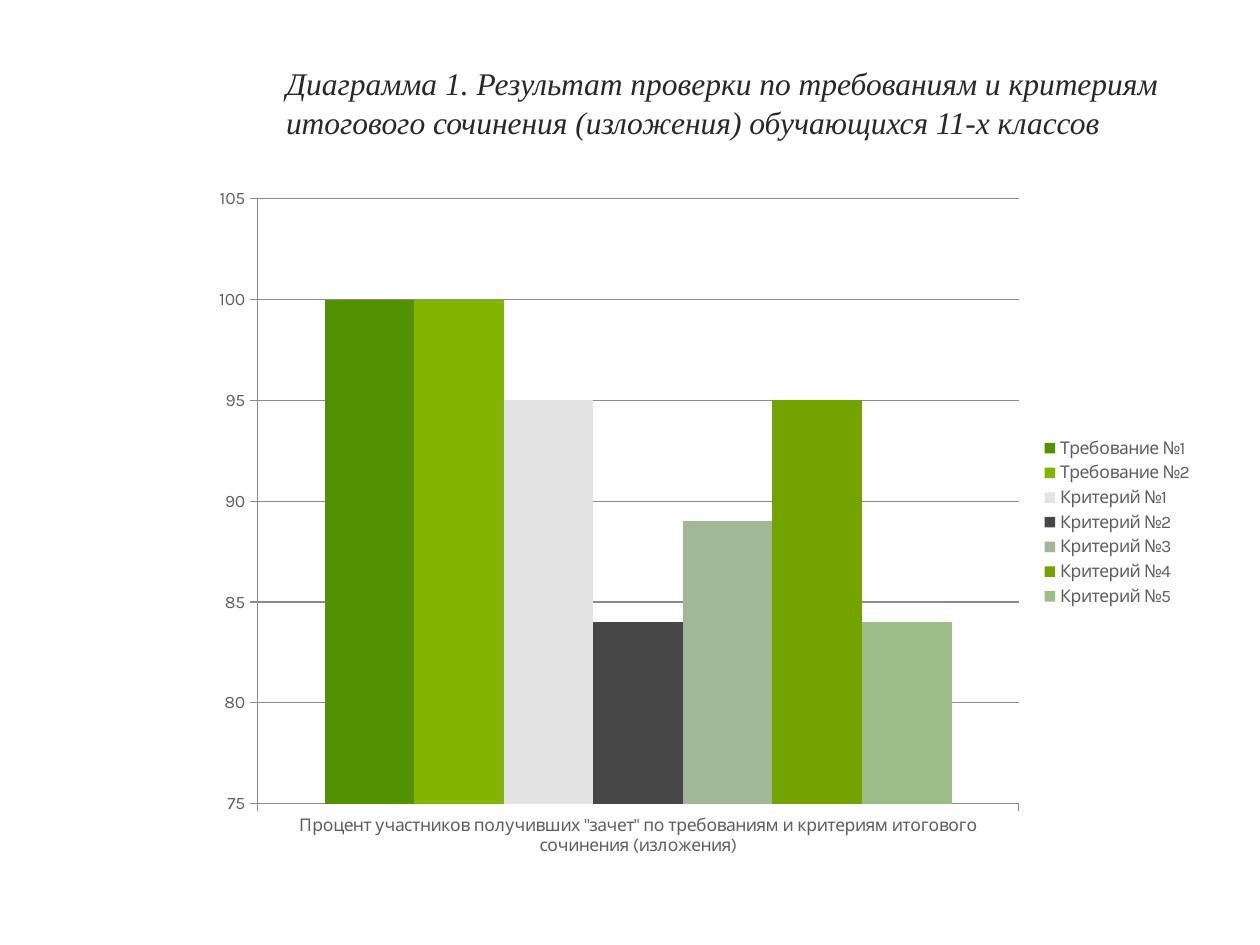
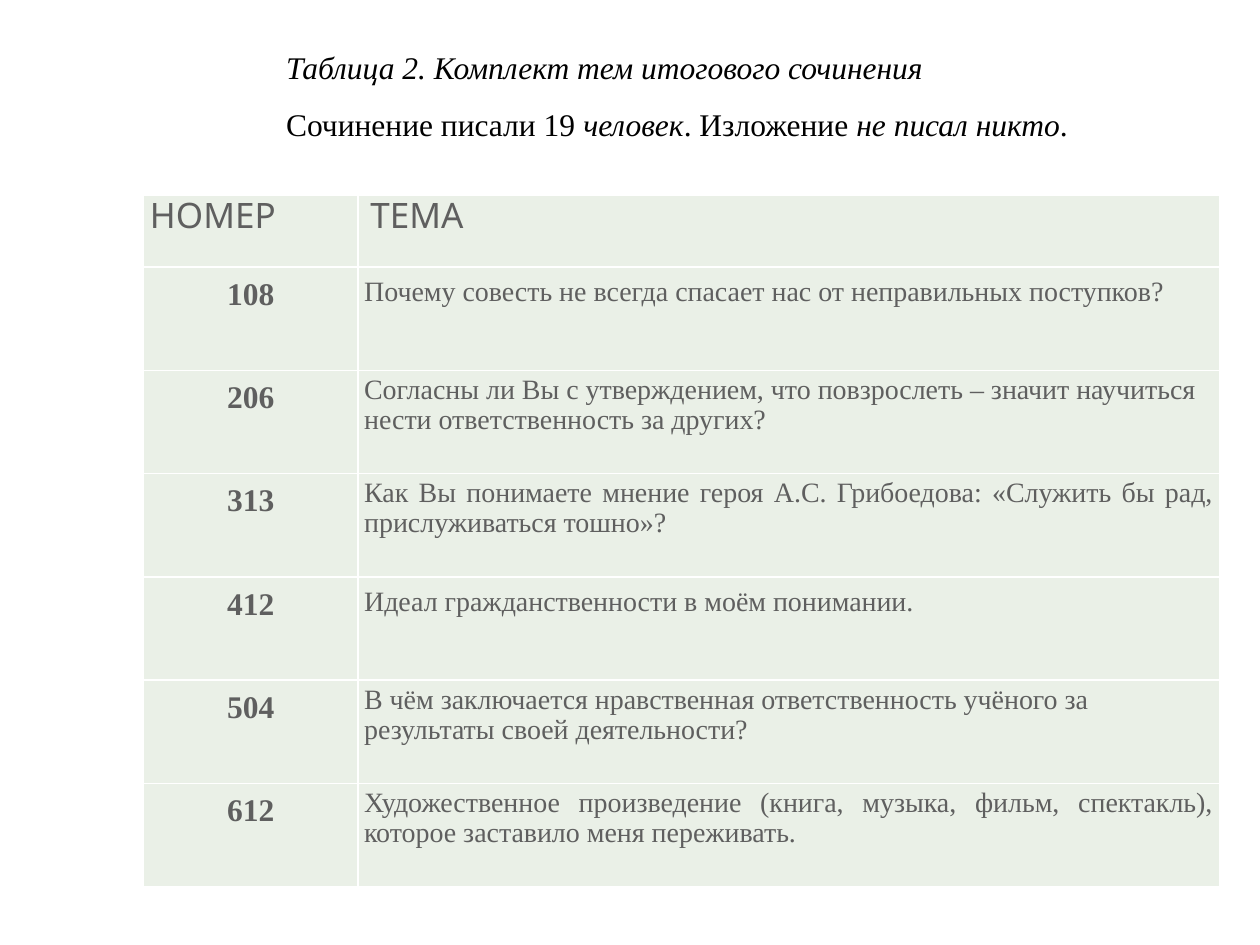
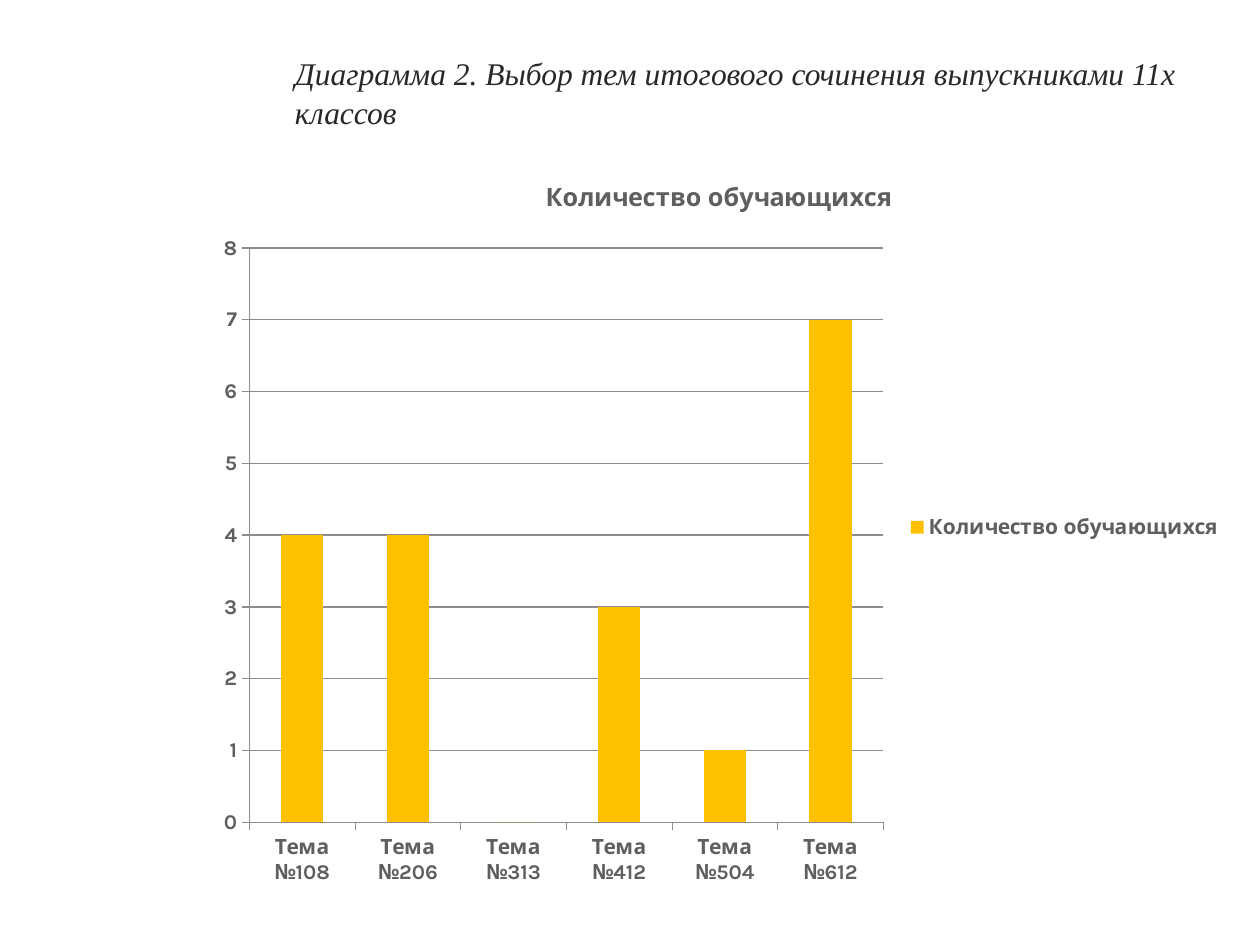
import pptx
import pptx.chart.data
import pptx.dml.color
import pptx.enum.chart
import pptx.enum.text
import pptx.oxml
import pptx.util
from pptx.util import Inches, Pt

SERIF, SANS = "Times New Roman", "Karla"
INK, BLACK, GREY, AXIS = "282828", "000000", "5F5F5F", "8C8C8C"
CELL_FILL, CELL_BORDER = "EAF0E7", "FFFFFF"
ALIGN = pptx.enum.text.PP_ALIGN
ANCHOR = pptx.enum.text.MSO_ANCHOR

RESULTS_TITLE = [[("Диаграмма 1. Результат проверки по требованиям и критериям "
                   "итогового сочинения (изложения) обучающихся 11-х классов", True)]]
RESULTS = {
    "box": (1.58, 1.39, 7.99, 5.51),
    "cats": ['Процент участников получивших "зачет" по требованиям и критериям '
             "итогового сочинения (изложения)"],
    "series": [
        ("Требование №1", [100], "529200"),
        ("Требование №2", [100], "82B500"),
        ("Критерий №1", [95], "E3E3E3"),
        ("Критерий №2", [84], "474747"),
        ("Критерий №3", [89], "A2B796"),
        ("Критерий №4", [95], "74A300"),
        ("Критерий №5", [84], "9BBE88"),
    ],
    "scale": (75, 105, 5), "size": 10, "bold": False, "title": None,
}

TOPICS_TITLE = [
    [("Таблица 2. Комплект тем итогового сочинения", True)],
    [("Сочинение писали 19 ", False), ("человек", True), (". Изложение ", False),
     ("не писал никто", True), (".", False)],
]
TOPICS_HEAD = ("НОМЕР", "ТЕМА")
TOPICS = [
    ("108", "Почему совесть не всегда спасает нас от неправильных поступков?", ALIGN.LEFT, 1.15),
    ("206", "Согласны ли Вы с утверждением, что повзрослеть – значит научиться "
            "нести ответственность за других?", ALIGN.LEFT, 0.97),
    ("313", "Как Вы понимаете мнение героя А.С. Грибоедова: «Служить бы рад, "
            "прислуживаться тошно»?", ALIGN.JUSTIFY, 0.97),
    ("412", "Идеал гражданственности в моём понимании.", ALIGN.LEFT, 1.15),
    ("504", "В чём заключается нравственная ответственность учёного за "
            "результаты своей деятельности?", ALIGN.LEFT, 0.97),
    ("612", "Художественное произведение (книга, музыка, фильм, спектакль), "
            "которое заставило меня переживать.", ALIGN.JUSTIFY, 0.97),
]
TOPICS_BOX = (1.14, 1.55, 8.54, 5.51)
TOPIC_COLS = (1.7, 6.84)
HEAD_HEIGHT, ROW_HEIGHT = 0.57, 0.82

CHOICE_TITLE = [[("Диаграмма 2. Выбор тем итогового сочинения выпускниками 11х классов", True)]]
CHOICE = {
    "box": (1.61, 1.23, 8.19, 5.91),
    "cats": [f"Тема №{topic[0]}" for topic in TOPICS],
    "series": [("Количество обучающихся", [4, 4, 0, 3, 1, 7], "FFC000")],
    "scale": (0, 8, 1), "size": 12, "bold": True, "title": "Количество обучающихся",
}


def rgb(value):
    """Turn a hex string into a colour."""
    return pptx.dml.color.RGBColor.from_string(value)


def inches(box):
    """Turn numbers into lengths."""
    return [Inches(n) for n in box]


def set_font(font, size, color, name, bold=False, italic=False):
    """Format a font."""
    font.size, font.name, font.bold, font.italic = Pt(size), name, bold, italic
    font.color.rgb = rgb(color)


def add_slide(prs, paragraphs, box, color=INK, align=ALIGN.LEFT, anchor=ANCHOR.TOP, spacing=1.05):
    """Add a slide with its heading."""
    s = prs.slides.add_slide(prs.slide_layouts[5])
    sp = s.shapes.title
    sp.left, sp.top, sp.width, sp.height = inches(box)
    tf = sp.text_frame
    tf.word_wrap = True
    tf.auto_size = pptx.enum.text.MSO_AUTO_SIZE.NONE
    tf.vertical_anchor = anchor
    for i, runs in enumerate(paragraphs):
        p = tf.add_paragraph() if i else tf.paragraphs[0]
        p.alignment, p.line_spacing, p.space_before = align, spacing, Pt(0)
        for text, italic in runs:
            r = p.add_run()
            r.text = text
            set_font(r.font, 18, color, SERIF, italic=italic)
    return s


def add_columns(s, spec):
    """Add a clustered column chart."""
    data = pptx.chart.data.CategoryChartData()
    data.categories = spec["cats"]
    for name, values, _ in spec["series"]:
        data.add_series(name, values)
    kind = pptx.enum.chart.XL_CHART_TYPE.COLUMN_CLUSTERED
    chart = s.shapes.add_chart(kind, *inches(spec["box"]), data).chart
    set_font(chart.font, spec["size"], GREY, SANS, spec["bold"])

    chart.has_title = spec["title"] is not None
    if chart.has_title:
        r = chart.chart_title.text_frame.paragraphs[0].add_run()
        r.text = spec["title"]
        set_font(r.font, spec["size"] * 1.2, GREY, SANS, True)
    chart.has_legend = True
    chart.legend.position = pptx.enum.chart.XL_LEGEND_POSITION.RIGHT
    chart.legend.include_in_layout = False

    plot = chart.plots[0]
    plot.gap_width, plot.overlap, plot.vary_by_categories = 150, 0, False
    for series, (_, _, color) in zip(plot.series, spec["series"]):
        series.format.fill.solid()
        series.format.fill.fore_color.rgb = rgb(color)

    value_axis = chart.value_axis
    value_axis.minimum_scale, value_axis.maximum_scale, value_axis.major_unit = spec["scale"]
    value_axis.has_major_gridlines = True
    for part in (value_axis, chart.category_axis, value_axis.major_gridlines):
        part.format.line.color.rgb = rgb(AXIS)
        part.format.line.width = Pt(0.75)
    for axis in (value_axis, chart.category_axis):
        axis.major_tick_mark = pptx.enum.chart.XL_TICK_MARK.OUTSIDE


def add_borders(cell):
    """Draw the four borders of a cell."""
    tc_pr = cell._tc.get_or_add_tcPr()
    for i, side in enumerate(("lnL", "lnR", "lnT", "lnB")):
        tc_pr.insert(i, pptx.oxml.parse_xml(
            f'<a:{side} xmlns:a="http://schemas.openxmlformats.org/drawingml/2006/main" w="12700">'
            f'<a:solidFill><a:srgbClr val="{CELL_BORDER}"/></a:solidFill></a:{side}>'))


def fill_cell(cell, text, size, name, spacing, align=ALIGN.LEFT, bold=False, after=0,
              anchor=ANCHOR.TOP, left=0.05):
    """Write and format one table cell."""
    cell.margin_left, cell.margin_top, cell.margin_right, cell.margin_bottom = inches(
        (left, 0.04, 0.05, 0.05))
    cell.vertical_anchor = anchor
    cell.fill.solid()
    cell.fill.fore_color.rgb = rgb(CELL_FILL)
    add_borders(cell)
    p = cell.text_frame.paragraphs[0]
    p.alignment, p.line_spacing, p.space_after = align, spacing, Pt(after)
    r = p.add_run()
    r.text = text
    set_font(r.font, size, GREY, name, bold)


def add_topics(s):
    """Add the table of topics."""
    table = s.shapes.add_table(len(TOPICS) + 1, len(TOPIC_COLS), *inches(TOPICS_BOX)).table
    for column, width in zip(table.columns, TOPIC_COLS):
        column.width = Inches(width)
    for i, row in enumerate(table.rows):
        row.height = Inches(ROW_HEIGHT if i else HEAD_HEIGHT)
    for j, text in enumerate(TOPICS_HEAD):
        fill_cell(table.cell(0, j), text, 20, SANS, Pt(8), anchor=ANCHOR.MIDDLE,
                  left=0.05 * (j + 1))
    for i, (number, topic, align, spacing) in enumerate(TOPICS, 1):
        fill_cell(table.cell(i, 0), number, 18, SERIF, 1.15, ALIGN.CENTER, True, 10)
        fill_cell(table.cell(i, 1), topic, 16, SERIF, spacing, align, after=10)


def main():
    """Build the slides."""
    prs = pptx.Presentation()
    prs.slide_width, prs.slide_height = Inches(10), Inches(7.5)
    add_columns(add_slide(prs, RESULTS_TITLE, (2.17, 0.44, 7.61, 0.63)), RESULTS)
    add_topics(add_slide(prs, TOPICS_TITLE, (2.17, 0.18, 7.48, 1.01), BLACK,
                         ALIGN.JUSTIFY, ANCHOR.MIDDLE, 1.5))
    add_columns(add_slide(prs, CHOICE_TITLE, (2.24, 0.36, 7.29, 0.63)), CHOICE)
    prs.save("out.pptx")


if __name__ == "__main__":
    main()
